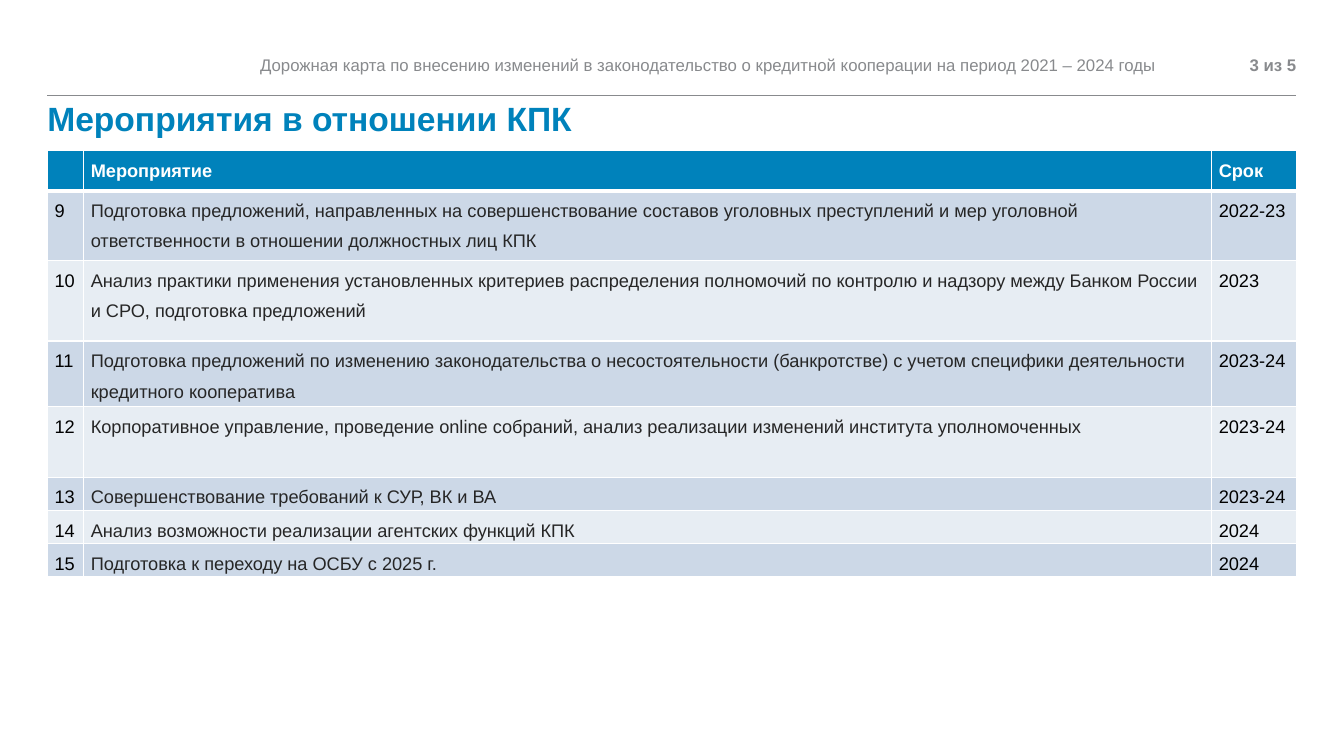
from lxml.etree import SubElement
from pptx import Presentation
from pptx.dml.color import RGBColor
from pptx.enum.shapes import MSO_CONNECTOR as Connector
from pptx.enum.text import MSO_ANCHOR as Anchor, PP_ALIGN as Align
from pptx.oxml.ns import qn
from pptx.util import Pt

LEFT, RIGHT = 33.8, 925.9
COLUMN_WIDTHS = 25.9, 805.7, 60.5
ROW_HEIGHTS = 28.8, 49.7, 57.6, 43.6, 50.4, 23.8, 23.8, 23.8
HEADINGS = "", "Мероприятие", "Срок"
FIRST_NUMBER = 9
MEASURES = (
    ("Подготовка предложений, направленных на совершенствование составов уголовных преступлений "
     "и мер уголовной ответственности в отношении должностных лиц КПК", "2022-23"),
    ("Анализ практики применения установленных критериев распределения полномочий по контролю "
     "и надзору между Банком России и СРО, подготовка предложений", "2023"),
    ("Подготовка предложений по изменению законодательства о несостоятельности (банкротстве) "
     "с учетом специфики деятельности кредитного кооператива", "2023-24"),
    ("Корпоративное управление, проведение online собраний, анализ реализации изменений "
     "института уполномоченных", "2023-24"),
    ("Совершенствование требований к СУР, ВК и ВА", "2023-24"),
    ("Анализ возможности реализации агентских функций КПК", "2024"),
    ("Подготовка к переходу на ОСБУ с 2025 г.", "2024"),
)


def color(value):
    return RGBColor.from_string(value)


class RoadmapSlide:
    """Draws the elements of a roadmap slide in one shared style."""

    FONT = "Arial"
    BLUE, GRAY, WHITE, BLACK, DARK = "0082BB", "888A8D", "FFFFFF", "000000", "262626"
    BANDS = "CCD8E7", "E7EDF3"

    def __init__(self, deck):
        self.slide = deck.slides.add_slide(deck.slide_layouts[6])

    def style(self, paragraph, size, ink, bold=False):
        for run in paragraph.runs:
            run.font.name = self.FONT
            run.font.size = Pt(size)
            run.font.bold = bold
            run.font.color.rgb = color(ink)

    def text(self, wording, left, top, width, height, size, ink, bold=False,
             anchor=Anchor.MIDDLE, align=Align.LEFT, spacing=1.0):
        frame = self.slide.shapes.add_textbox(Pt(left), Pt(top), Pt(width), Pt(height)).text_frame
        frame.margin_left = frame.margin_right = frame.margin_top = frame.margin_bottom = 0
        frame.word_wrap = True
        frame.vertical_anchor = anchor
        frame.text = wording
        paragraph = frame.paragraphs[0]
        paragraph.alignment = align
        paragraph.line_spacing = spacing
        self.style(paragraph, size, ink, bold)

    def rule(self, y):
        divider = self.slide.shapes.add_connector(
            Connector.STRAIGHT, Pt(LEFT), Pt(y), Pt(RIGHT), Pt(y))
        divider.line.color.rgb = color(self.GRAY)
        divider.line.width = Pt(0.5)
        SubElement(divider.element.spPr, qn("a:effectLst"))

    def borders(self, cell, top, bottom):
        properties = cell._tc.get_or_add_tcPr()
        for side, width in (("L", 1), ("R", 1), ("T", top), ("B", bottom)):
            edge = SubElement(properties, qn(f"a:ln{side}"), w=str(Pt(width)))
            SubElement(SubElement(edge, qn("a:solidFill")), qn("a:srgbClr"), val=self.WHITE)

    def cell(self, cell, wording, fill, ink, bold, top, bottom):
        self.borders(cell, top, bottom)
        cell.fill.solid()
        cell.fill.fore_color.rgb = color(fill)
        cell.margin_left = cell.margin_right = Pt(5.2)
        cell.margin_top = cell.margin_bottom = 0
        cell.text = wording
        paragraph = cell.text_frame.paragraphs[0]
        paragraph.line_spacing = 1.5
        paragraph.space_after = Pt(6)
        self.style(paragraph, 13, ink, bold)

    def table(self, rows, top):
        table = self.slide.shapes.add_table(
            len(rows), len(COLUMN_WIDTHS), Pt(LEFT), Pt(top),
            Pt(sum(COLUMN_WIDTHS)), Pt(sum(ROW_HEIGHTS))).table
        for column, width in zip(table.columns, COLUMN_WIDTHS):
            column.width = Pt(width)
        for row, height in zip(table.rows, ROW_HEIGHTS):
            row.height = Pt(height)
        for r, wordings in enumerate(rows):
            header = r == 0
            fill = self.BLUE if header else self.BANDS[(r - 1) % 2]
            inks = [self.WHITE] * 3 if header else [self.BLACK, self.DARK, self.BLACK]
            for c, (wording, ink) in enumerate(zip(wordings, inks)):
                self.cell(table.cell(r, c), wording, fill, ink, header,
                          top=3 if r == 1 else 1, bottom=3 if header else 1)


def main():
    deck = Presentation()
    deck.slide_width, deck.slide_height = Pt(960), Pt(540)
    roadmap = RoadmapSlide(deck)
    roadmap.rule(68.4)
    roadmap.text("Мероприятия в отношении КПК", LEFT, 73.4, RIGHT - LEFT, 47.5, 24,
                 roadmap.BLUE, bold=True, anchor=Anchor.TOP, spacing=0.9)
    roadmap.text("Дорожная карта по внесению изменений в законодательство о кредитной кооперации "
                 "на период 2021 – 2024 годы", 185.8, 33.8, 664.6, 25.2, 12, roadmap.GRAY)
    roadmap.text("3 из 5", 867.6, 33.8, 58.3, 25.2, 12, roadmap.GRAY,
                 bold=True, align=Align.RIGHT)
    numbered = [(str(number), *measure) for number, measure in enumerate(MEASURES, FIRST_NUMBER)]
    roadmap.table([HEADINGS, *numbered], 107.5)
    deck.save("out.pptx")


if __name__ == "__main__":
    main()
